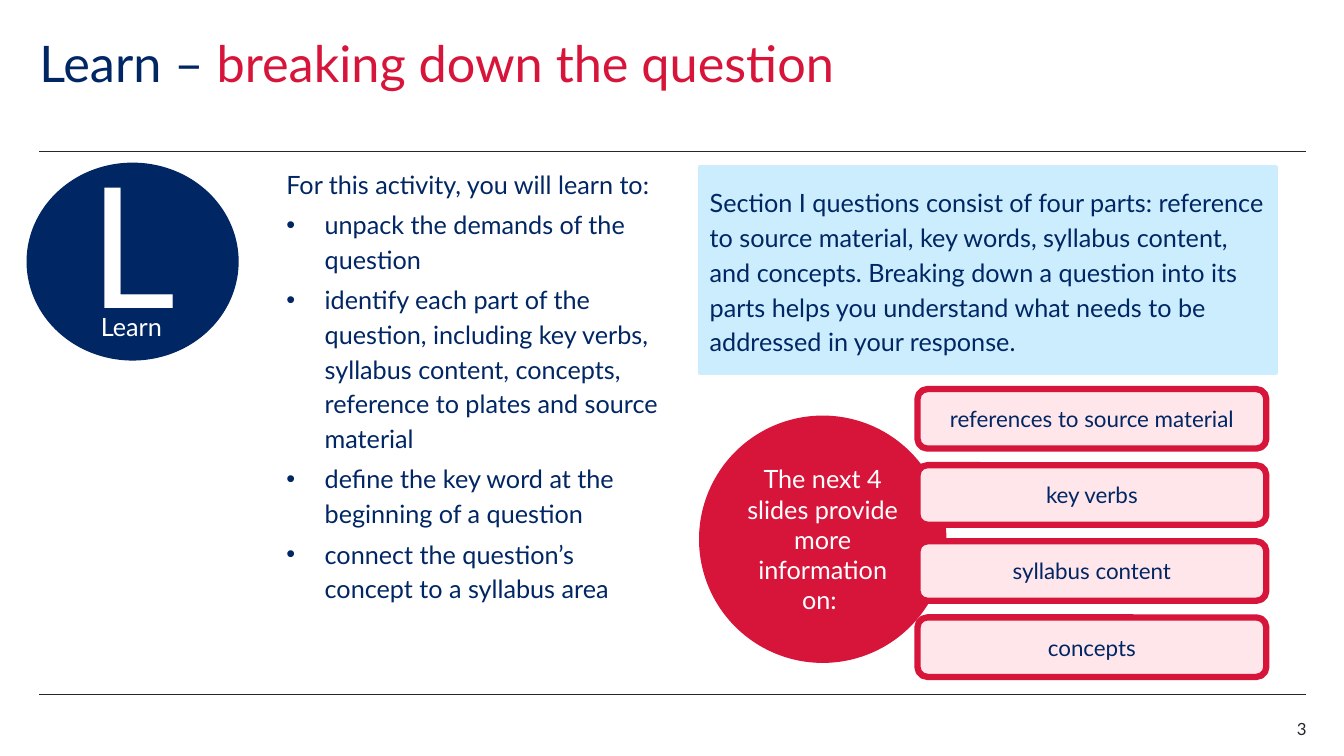
from dataclasses import dataclass

import pptx
import pptx.dml.color
import pptx.enum.shapes
import pptx.enum.text
import pptx.oxml.ns
import pptx.util
from lxml import etree
from pptx.util import Inches

SHAPE = pptx.enum.shapes.MSO_SHAPE
ALIGN = pptx.enum.text.PP_ALIGN
ANCHOR = pptx.enum.text.MSO_ANCHOR


@dataclass(frozen=True)
class Theme:
    """Colours, font and type sizes of the slide."""
    font: str = "Lato"
    navy: str = "002664"
    red: str = "D7153A"
    sky: str = "CBEDFD"
    blush: str = "FFE6EA"
    white: str = "FFFFFF"
    ink: str = "22272B"
    title: int = 36
    letter: int = 120
    body: int = 18
    card: int = 16
    number: int = 12


THEME = Theme()


def rgb(code):
    """Turn a hex code into a colour."""
    return pptx.dml.color.RGBColor.from_string(code)


def place(shape, left, top, width, height):
    """Move and size a shape in inches."""
    shape.left, shape.top = Inches(left), Inches(top)
    shape.width, shape.height = Inches(width), Inches(height)


def set_bullet(paragraph, bullet, indent):
    """Give a paragraph a bullet with a hanging indent, or none."""
    properties = paragraph._p.get_or_add_pPr()
    properties.set("marL", str(Inches(indent)))
    properties.set("indent", str(-Inches(indent)))
    tag = "a:buChar" if bullet else "a:buNone"
    mark = etree.SubElement(properties, pptx.oxml.ns.qn(tag))
    if bullet:
        mark.set("char", bullet)


def write(shape, paragraphs, size=THEME.body, color=THEME.navy, align=ALIGN.LEFT,
          anchor=ANCHOR.TOP, spacing=1.0, before=0, insets=(0.1, 0.05, 0.1, 0.05),
          bullet=None, indent=0.38):
    """Fill a shape with paragraphs of (text, colour) runs; bullets follow the first."""
    frame = shape.text_frame
    frame.word_wrap = True
    frame.auto_size = pptx.enum.text.MSO_AUTO_SIZE.NONE
    frame.vertical_anchor = anchor
    (frame.margin_left, frame.margin_top,
     frame.margin_right, frame.margin_bottom) = map(Inches, insets)
    for index, runs in enumerate(paragraphs):
        paragraph = frame.add_paragraph() if index else frame.paragraphs[0]
        if bullet:
            set_bullet(paragraph, bullet if index else None, indent if index else 0)
        paragraph.alignment = align
        paragraph.line_spacing = spacing
        paragraph.space_before = pptx.util.Pt(before if index else 0)
        paragraph.space_after = pptx.util.Pt(0)
        for text, run_color in [(runs, color)] if isinstance(runs, str) else runs:
            run = paragraph.add_run()
            run.text = text
            run.font.name = THEME.font
            run.font.size = pptx.util.Pt(size)
            run.font.color.rgb = rgb(run_color)


def add_panel(shapes, kind, box, text, fill, line, weight=1, **text_format):
    """Add a filled shape with its text."""
    panel = shapes.add_shape(kind, *map(Inches, box))
    panel.shadow.inherit = False
    panel.fill.solid()
    panel.fill.fore_color.rgb = rgb(fill)
    panel.line.color.rgb = rgb(line)
    panel.line.width = pptx.util.Pt(weight)
    write(panel, [text], anchor=ANCHOR.MIDDLE, **text_format)


def add_label(shapes, box, text, **text_format):
    """Add a text box without insets."""
    label = shapes.add_textbox(*map(Inches, box))
    write(label, [text], insets=(0, 0, 0, 0), **text_format)


def add_rule(shapes, y):
    """Add a thin line across the slide."""
    rule = shapes.add_connector(pptx.enum.shapes.MSO_CONNECTOR.STRAIGHT,
                                Inches(0.39), Inches(y), Inches(12.95), Inches(y))
    rule.line.color.rgb = rgb(THEME.ink)
    rule.line.width = pptx.util.Pt(0.5)
    etree.SubElement(rule._element.spPr, pptx.oxml.ns.qn("a:effectLst"))


def add_badge(shapes):
    """Add the round letter badge with its caption."""
    badge = shapes.add_group_shape().shapes
    add_panel(badge, SHAPE.OVAL, (0.27, 1.62, 2.09, 1.95), "L", THEME.navy, THEME.navy,
              size=THEME.letter, color=THEME.white, align=ALIGN.CENTER,
              insets=(0.1, 0.05, 0.1, 0.45))
    add_label(badge, (1, 3.09, 1.55, 0.48), "Learn", color=THEME.white)


def add_topics(shapes):
    """Add the circle and the column of topic cards."""
    add_panel(shapes, SHAPE.OVAL, (6.94, 4.13, 2.44, 2.44),
              "The next 4 slides provide more information on: ", THEME.red, THEME.red,
              color=THEME.white, align=ALIGN.CENTER)
    topics = ("references to source material", "key verbs", "syllabus content", "concepts")
    first_top, pitch = 3.86, 0.755
    for index, topic in enumerate(topics):
        add_panel(shapes, SHAPE.ROUNDED_RECTANGLE,
                  (9.1, first_top + index * pitch, 3.46, 0.59), topic,
                  THEME.blush, THEME.red, weight=4.5, size=THEME.card, align=ALIGN.CENTER)


def main():
    """Build and save the slide."""
    deck = pptx.Presentation()
    deck.slide_width, deck.slide_height = Inches(13.33), Inches(7.5)
    slide = deck.slides.add_slide(deck.slide_layouts[1])
    shapes = slide.shapes
    for y in (1.5, 6.89):
        add_rule(shapes, y)

    heading = shapes.title
    place(heading, 0.39, 0.39, 11.02, 1.1)
    write(heading, [[("Learn – ", THEME.navy), ("breaking down the question", THEME.red)]],
          size=THEME.title, spacing=0.9, insets=(0, 0, 0, 0))

    add_badge(shapes)

    goals = slide.placeholders[1]
    place(goals, 2.74, 1.58, 3.92, 4.83)
    write(goals, [
        "For this activity, you will learn to:",
        "unpack the demands of the question",
        "identify each part of the question, including key verbs, syllabus content, "
        "concepts, reference to plates and source material",
        "define the key word at the beginning of a question",
        "connect the question’s concept to a syllabus area",
    ], spacing=1.15, before=4, bullet="•")

    add_panel(shapes, SHAPE.RECTANGLE, (6.94, 1.66, 5.71, 2.04),
              "Section I questions consist of four parts: reference to source material, "
              "key words, syllabus content, and concepts. Breaking down a question into "
              "its parts helps you understand what needs to be addressed in your response.",
              THEME.sky, THEME.sky, weight=3, spacing=1.15)
    add_topics(shapes)
    add_label(shapes, (12.17, 7.13, 0.79, 0.2), "3", size=THEME.number,
              color=THEME.ink, align=ALIGN.RIGHT)
    deck.save("out.pptx")


if __name__ == "__main__":
    main()
